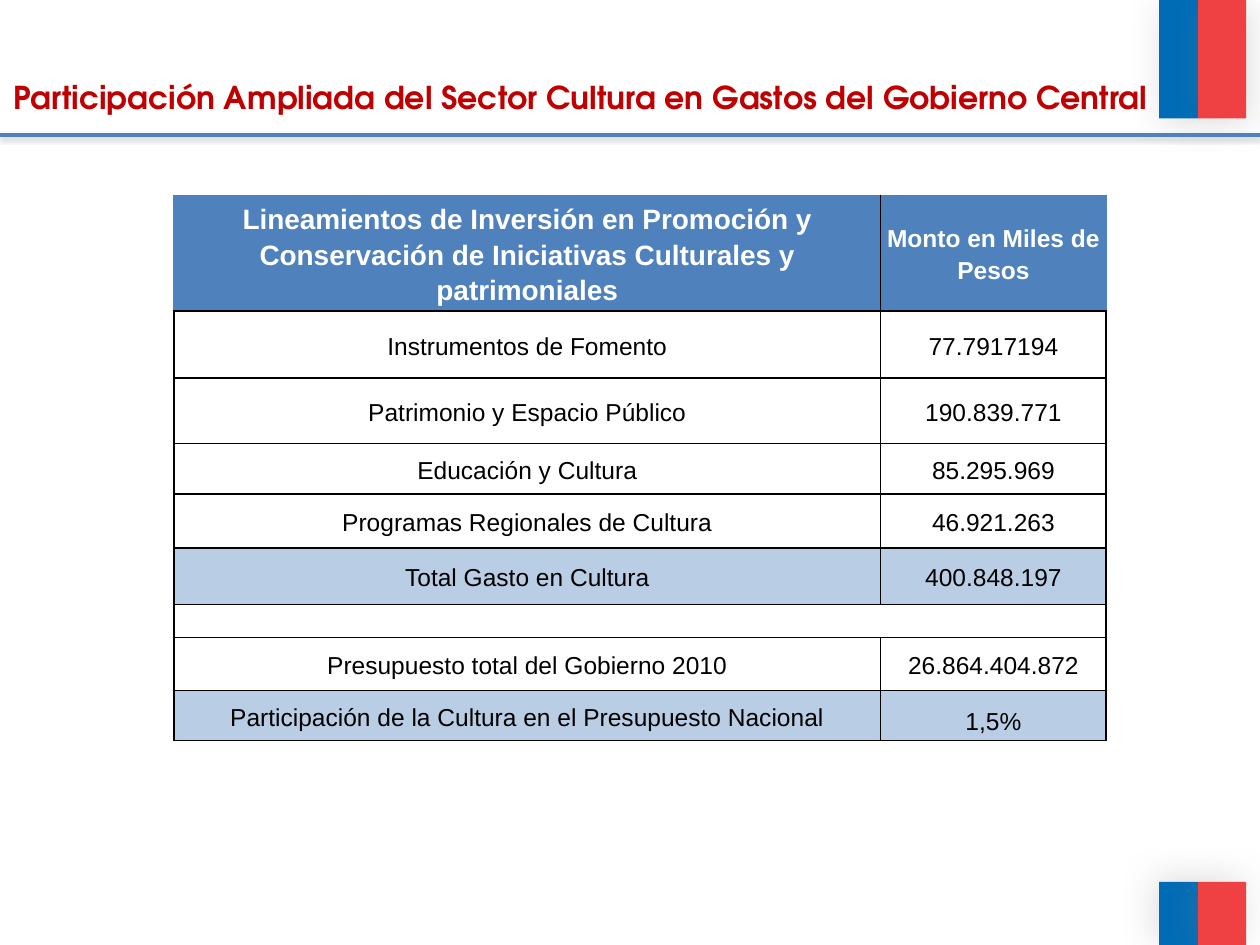
"""Build the slide on culture's share of central government spending."""
from dataclasses import dataclass

from lxml import etree
from pptx import Presentation
from pptx.dml.color import RGBColor
from pptx.enum.shapes import MSO_CONNECTOR, MSO_SHAPE
from pptx.enum.text import MSO_ANCHOR, MSO_AUTO_SIZE, PP_ALIGN
from pptx.oxml.ns import qn
from pptx.util import Inches, Pt

RECTANGLE, STRAIGHT = MSO_SHAPE.RECTANGLE, MSO_CONNECTOR.STRAIGHT
MIDDLE, TOP = MSO_ANCHOR.MIDDLE, MSO_ANCHOR.TOP
CENTER, JUSTIFY = PP_ALIGN.CENTER, PP_ALIGN.JUSTIFY
FIT_SHAPE = MSO_AUTO_SIZE.SHAPE_TO_FIT_TEXT


@dataclass(frozen=True)
class Theme:
    """Colours, fonts and type sizes of the slide."""

    accent: str = "4F81BD"
    total: str = "B9CDE5"
    paper: str = "FFFFFF"
    ink: str = "000000"
    title: str = "C00000"
    flag_blue: str = "006CB7"
    flag_red: str = "EF4144"
    shadow: str = "808080"
    title_font: str = "TeX Gyre Adventor"
    body_font: str = "Arial"
    title_size: int = 18
    heading_size: int = 16
    body_size: int = 14
    spacer_size: int = 10


THEME = Theme()
SLIDE_WIDTH, SLIDE_HEIGHT = 10, 7.5
TITLE = "Participación Ampliada del Sector Cultura en Gastos del Gobierno Central"
HEADINGS = (
    "Lineamientos de Inversión en Promoción y Conservación de Iniciativas "
    "Culturales y patrimoniales",
    "Monto en Miles de Pesos",
)
BUDGET = [
    (HEADINGS, 0.55, THEME.accent),
    (("Instrumentos de Fomento", "77.7917194"), 0.53, THEME.paper),
    (("Patrimonio y Espacio Público", "190.839.771"), 0.52, THEME.paper),
    (("Educación y Cultura", "85.295.969"), 0.4, THEME.paper),
    (("Programas Regionales de Cultura", "46.921.263"), 0.43, THEME.paper),
    (("Total Gasto en Cultura", "400.848.197"), 0.45, THEME.total),
    (("", ""), 0.26, THEME.paper),
    (("Presupuesto total del Gobierno 2010", "26.864.404.872"), 0.42, THEME.paper),
    (("Participación de la Cultura en el Presupuesto Nacional", "1,5%"), 0.4, THEME.total),
]
COLUMN_WIDTHS = (5.61, 1.79)
TABLE_LEFT, TABLE_TOP = 1.38, 1.55
FLAG_BANDS = [(9.2, 0.31, THEME.flag_blue), (9.51, 0.38, THEME.flag_red)]
FLAG_ROWS = [(0, 0.94, 45), (7, 0.5, 215)]
RULE_TOP = 1.07


def color(value):
    """Return the colour for a hex value."""
    return RGBColor.from_string(value)


def add_solid(parent, value):
    """Append a solid fill and return its colour element."""
    fill = etree.SubElement(parent, qn("a:solidFill"))
    return etree.SubElement(fill, qn("a:srgbClr"), val=value)


def cast_shadow(part, opacity, blur, distance, angle):
    """Give a shape or connector an outer shadow."""
    effects = etree.SubElement(part.element.spPr, qn("a:effectLst"))
    shadow = etree.SubElement(
        effects, qn("a:outerShdw"), blurRad=str(Pt(blur)), dist=str(Pt(distance)),
        dir=str(angle * 60000), rotWithShape="0",
    )
    tint = etree.SubElement(shadow, qn("a:srgbClr"), val=THEME.shadow)
    etree.SubElement(tint, qn("a:alpha"), val=str(opacity * 1000))


def set_font(paragraph, name, size, value, bold):
    """Set the font shared by the whole paragraph."""
    font = paragraph.font
    font.name, font.size, font.bold = name, Pt(size), bold
    font.color.rgb = color(value)


def add_flags(slide):
    """Draw the two-colour flag at the top and bottom right."""
    for top, height, angle in FLAG_ROWS:
        for left, width, tint in FLAG_BANDS:
            band = slide.shapes.add_shape(
                RECTANGLE, Inches(left), Inches(top), Inches(width), Inches(height)
            )
            band.fill.solid()
            band.fill.fore_color.rgb = color(tint)
            band.line.fill.background()
            cast_shadow(band, 25, 20, 3, angle)


def add_rule(slide):
    """Draw the rule under the title."""
    rule = slide.shapes.add_connector(
        STRAIGHT, 0, Inches(RULE_TOP), Inches(SLIDE_WIDTH), Inches(RULE_TOP)
    )
    rule.line.color.rgb = color(THEME.accent)
    rule.line.width = Pt(2)
    cast_shadow(rule, 38, 3.1, 1.6, 90)


def fill_title(slide):
    """Place and format the slide title."""
    title = slide.shapes.title
    title.left, title.top = Inches(-0.49), Inches(0.57)
    title.width, title.height = Inches(9.76), Inches(0.4)
    frame = title.text_frame
    frame.text = TITLE
    frame.word_wrap, frame.auto_size = True, FIT_SHAPE
    frame.vertical_anchor = TOP
    paragraph = frame.paragraphs[0]
    paragraph.alignment = JUSTIFY
    set_font(paragraph, THEME.title_font, THEME.title_size, THEME.title, True)
    properties = paragraph.font._element.getparent()
    properties.set("marL", str(Inches(0.5)))
    properties.set("indent", "0")


def set_borders(cell, borders):
    """Draw one-point cell borders, ordered left, right, top, bottom."""
    for side, value in zip(("lnL", "lnR", "lnT", "lnB"), borders):
        edge = etree.SubElement(
            cell._tc.get_or_add_tcPr(), qn(f"a:{side}"), w=str(Pt(1))
        )
        add_solid(edge, value)


def format_cell(cell, text, row, column, fill):
    """Write one cell with its borders, fill and type."""
    heading, percentage = row == 0, text == "1,5%"
    borders = [THEME.ink] * 4
    if heading:
        borders[column] = borders[2] = THEME.accent
    set_borders(cell, borders)
    cell.fill.solid()
    cell.fill.fore_color.rgb = color(fill)
    cell.margin_left = cell.margin_right = Inches(0.05)
    cell.margin_top = cell.margin_bottom = 0
    cell.vertical_anchor = MIDDLE
    paragraph = cell.text_frame.paragraphs[0]
    if text:
        cell.text = text
        paragraph = cell.text_frame.paragraphs[0]
    paragraph.alignment = CENTER
    paragraph.line_spacing = 1.5 if percentage else 1.15
    if percentage:
        paragraph.space_after = Pt(10)
    size = THEME.heading_size if heading and column == 0 else THEME.body_size
    set_font(
        paragraph, THEME.body_font, size if text else THEME.spacer_size,
        THEME.paper if heading else THEME.ink, heading,
    )
    if not text:
        etree.SubElement(
            paragraph._p, qn("a:endParaRPr"), sz=str(THEME.spacer_size * 100)
        )


def add_budget(slide):
    """Add the budget table, with the empty row merged across."""
    heights = [height for _, height, _ in BUDGET]
    table = slide.shapes.add_table(
        len(BUDGET), len(COLUMN_WIDTHS), Inches(TABLE_LEFT), Inches(TABLE_TOP),
        Inches(sum(COLUMN_WIDTHS)), Inches(sum(heights)),
    ).table
    table.first_row = table.horz_banding = False
    for column, width in zip(table.columns, COLUMN_WIDTHS):
        column.width = Inches(width)
    for row, (texts, height, fill) in enumerate(BUDGET):
        table.rows[row].height = Inches(height)
        for column, text in enumerate(texts):
            format_cell(table.cell(row, column), text, row, column, fill)
        if not any(texts):
            table.cell(row, 0).merge(table.cell(row, len(texts) - 1))


def main():
    """Build and save the presentation."""
    deck = Presentation()
    deck.slide_width, deck.slide_height = Inches(SLIDE_WIDTH), Inches(SLIDE_HEIGHT)
    slide = deck.slides.add_slide(deck.slide_layouts[5])
    add_flags(slide)
    add_budget(slide)
    add_rule(slide)
    fill_title(slide)
    deck.save("out.pptx")


if __name__ == "__main__":
    main()
